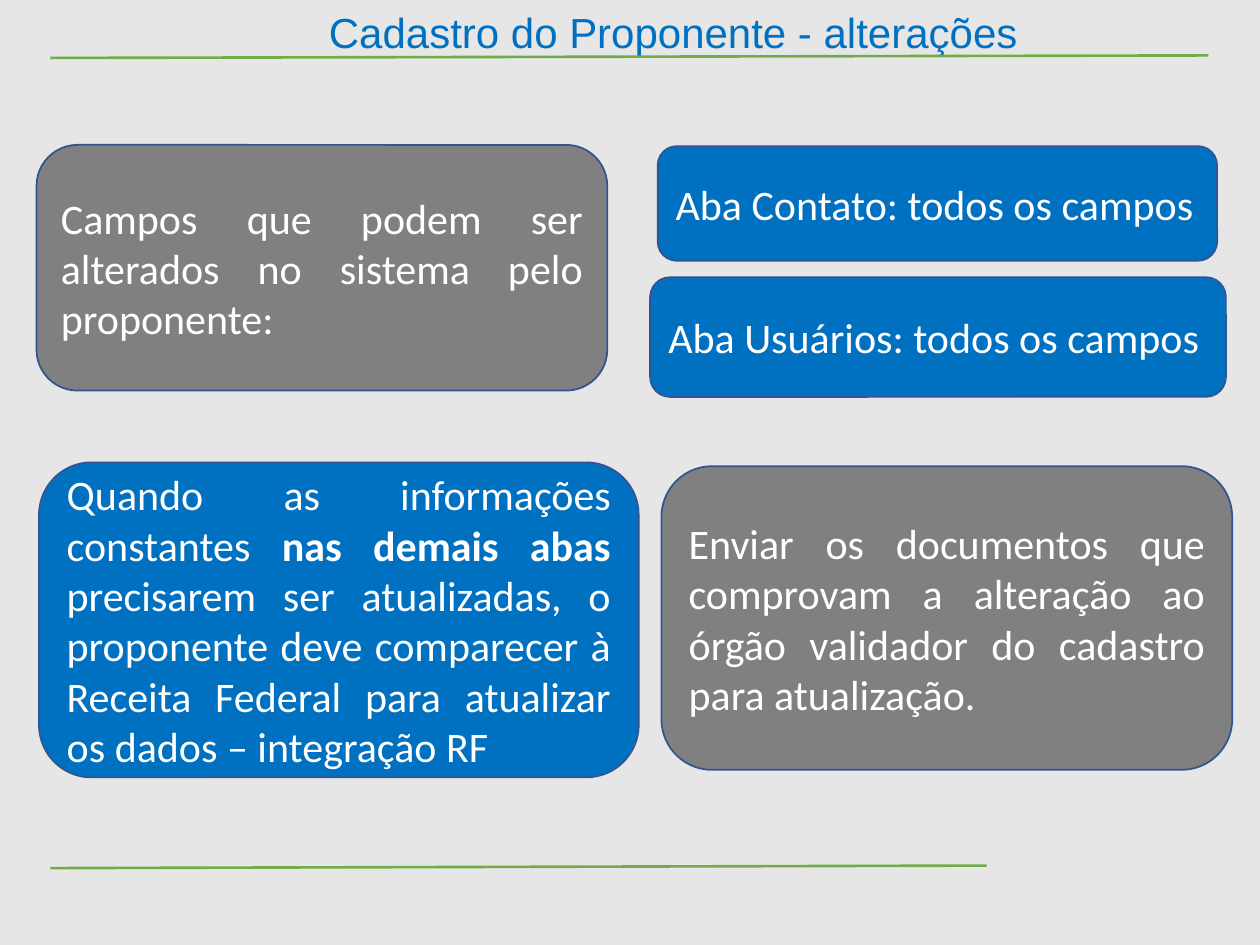
import pptx
import pptx.util
import pptx.dml.color
import pptx.enum.shapes
import pptx.enum.text
import lxml.etree

Inches, Pt = pptx.util.Inches, pptx.util.Pt
ALIGN = pptx.enum.text.PP_ALIGN
ANCHOR = pptx.enum.text.MSO_ANCHOR

THEME = {
    "back": "E7E6E6", "blue": "0070C0", "gray": "808080", "white": "FFFFFF",
    "edge": "325491", "rule": "70AD47",
    "head": "Arial", "body": "Calibri", "size": 24, "edge_w": 1, "rule_w": 1.5,
}

TITLE = ("Cadastro do Proponente - alterações", (2.51, 0, 5.81, 0.5))

# start and end of each rule
RULES = [((0.4, 0.46), (9.59, 0.44)), ((0.4, 6.89), (7.83, 6.87))]

# place, fill, alignment, list of (text, bold)
CARDS = [
    ((0.29, 1.15, 4.53, 1.95), "gray", ALIGN.JUSTIFY,
     [("Campos que podem ser alterados no sistema pelo proponente:", False)]),
    ((5.22, 1.16, 4.44, 0.91), "blue", ALIGN.LEFT,
     [("Aba Contato: todos os campos", False)]),
    ((5.16, 2.2, 4.57, 0.95), "blue", ALIGN.LEFT,
     [("Aba Usuários: todos os campos", False)]),
    ((0.31, 3.67, 4.76, 2.5), "blue", ALIGN.JUSTIFY,
     [("Quando as informações constantes ", False),
      ("nas demais abas", True),
      (" precisarem ser atualizadas, o proponente deve comparecer à "
       "Receita Federal para atualizar os dados – integração RF", False)]),
    ((5.25, 3.7, 4.53, 2.41), "gray", ALIGN.JUSTIFY,
     [("Enviar os documentos que comprovam a alteração ao órgão "
       "validador do cadastro para atualização.", False)]),
]


def color(name):
    return pptx.dml.color.RGBColor.from_string(THEME[name])


def write(frame, runs, align, anchor, face, ink):
    frame.word_wrap = True
    frame.auto_size = pptx.enum.text.MSO_AUTO_SIZE.NONE
    frame.vertical_anchor = anchor
    para = frame.paragraphs[0]
    para.alignment = align
    para.font.name = THEME[face]
    para.font.size = Pt(THEME["size"])
    para.font.color.rgb = color(ink)
    for text, bold in runs:
        run = para.add_run()
        run.text = text
        if bold:
            run.font.bold = True


def add_rule(slide, start, end):
    line = slide.shapes.add_connector(
        pptx.enum.shapes.MSO_CONNECTOR.STRAIGHT,
        *map(Inches, start + end))
    line.line.color.rgb = color("rule")
    line.line.width = Pt(THEME["rule_w"])
    lxml.etree.SubElement(line._element.spPr, pptx.oxml.ns.qn("a:effectLst"))


def add_card(slide, place, fill, align, runs):
    card = slide.shapes.add_shape(
        pptx.enum.shapes.MSO_SHAPE.ROUNDED_RECTANGLE, *map(Inches, place))
    card.shadow.inherit = False
    card.fill.solid()
    card.fill.fore_color.rgb = color(fill)
    card.line.color.rgb = color("edge")
    card.line.width = Pt(THEME["edge_w"])
    write(card.text_frame, runs, align, ANCHOR.MIDDLE, "body", "white")


def add_title(slide, text, place):
    title = slide.shapes.title
    title.left, title.top, title.width, title.height = map(Inches, place)
    write(title.text_frame, [(text, False)], ALIGN.LEFT, ANCHOR.TOP,
          "head", "blue")


def main():
    deck = pptx.Presentation()
    deck.slide_width, deck.slide_height = Inches(10), Inches(7.5)
    slide = deck.slides.add_slide(deck.slide_layouts.get_by_name("Title Only"))
    slide.background.fill.solid()
    slide.background.fill.fore_color.rgb = color("back")
    for rule in RULES:
        add_rule(slide, *rule)
    for card in CARDS:
        add_card(slide, *card)
    add_title(slide, *TITLE)
    deck.save("out.pptx")


if __name__ == "__main__":
    main()
